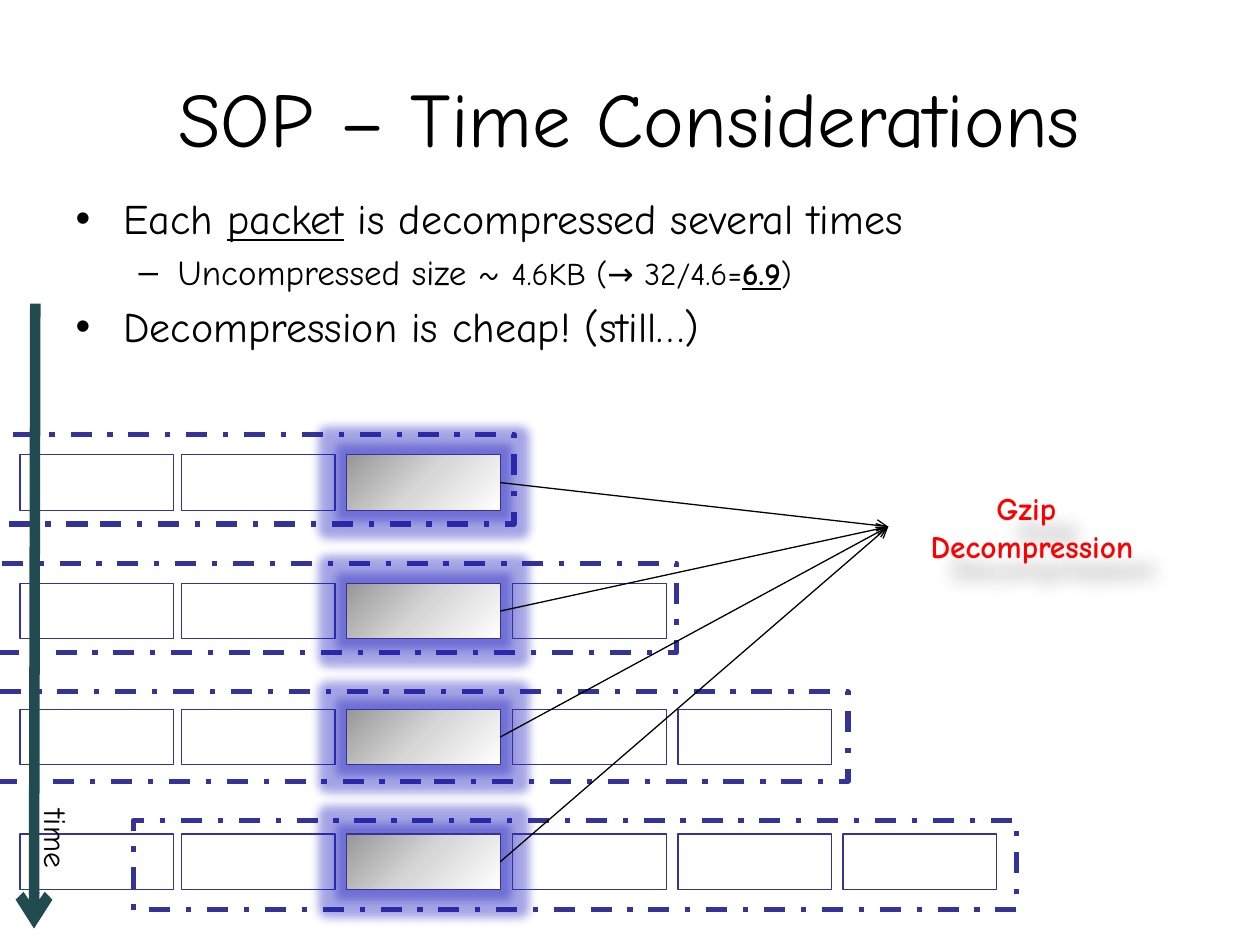
from pptx import Presentation
from pptx.dml.color import RGBColor
from pptx.enum.dml import MSO_LINE
from pptx.enum.shapes import MSO_CONNECTOR, MSO_SHAPE
from pptx.enum.text import MSO_ANCHOR, MSO_AUTO_SIZE, PP_ALIGN
from pptx.oxml import parse_xml
from pptx.oxml.ns import nsdecls
from pptx.util import Inches, Pt

STRAIGHT = MSO_CONNECTOR.STRAIGHT
RECTANGLE = MSO_SHAPE.RECTANGLE
DASH_DOT = MSO_LINE.DASH_DOT
CENTER, LEFT = PP_ALIGN.CENTER, PP_ALIGN.LEFT
MIDDLE, TOP = MSO_ANCHOR.MIDDLE, MSO_ANCHOR.TOP
NO_AUTOFIT = MSO_AUTO_SIZE.NONE

FONT = "Comic Neue"
COLORS = {"text": "000000", "outline": "333399", "glow": "1F1FBF",
          "time": "224B50", "label": "FF0000"}
PACKET_GRADIENT = [(0, "979797"), (50, "D7D7D7"), (100, "FFFFFF")]

BOX_WIDTH, BOX_HEIGHT = 1.22, 0.44
COLUMN_LEFTS = [0.16, 1.44, 2.75, 4.07, 5.38, 6.69]
ROW_TOPS = [3.61, 4.63, 5.63, 6.62]
PACKET_COLUMN = 2
FRAME_TOP, FRAME_STEP, FRAME_HEIGHT = 3.45, 1.02, 0.71
FRAME_SPANS = [(-2.69, 6.77), (-1.4, 6.77), (-0.04, 6.77), (1.06, 7.01)]
TARGET = (7.05, 4.18)

# Each paragraph: level, bullet, indent, hanging, runs of (text, format)
BULLETS = [
    (0, "•", 0.38, 0.38, [("Each ", {"size": Pt(24)}),
                          ("packet", {"size": Pt(24), "underline": True}),
                          (" is decompressed several times", {"size": Pt(24)})]),
    (1, "–", 0.81, 0.31, [("Uncompressed size ~ ", {"size": Pt(20)}),
                          ("4.6KB (→ 32/4.6=", {"size": Pt(18)}),
                          ("6.9", {"size": Pt(18), "bold": True, "underline": True}),
                          (")", {"size": Pt(18)})]),
    (0, "•", 0.38, 0.38, [("Decompression is cheap! (still…)", {"size": Pt(24)})]),
]


def drawing_xml(tag, attributes="", content=""):
    return parse_xml(f'<a:{tag} {nsdecls("a")} {attributes}>{content}</a:{tag}>')


def effect_color(color, opacity):
    return f'<a:srgbClr val="{color}"><a:alpha val="{opacity * 1000}"/></a:srgbClr>'


class SlideBuilder:
    def __init__(self, slide):
        self.slide = slide

    def place(self, shape, left, top, width, height):
        shape.left, shape.top = Inches(left), Inches(top)
        shape.width, shape.height = Inches(width), Inches(height)

    def add_run(self, paragraph, text, color="text", **formats):
        run = paragraph.add_run()
        run.text = text
        run.font.name = FONT
        run.font.color.rgb = RGBColor.from_string(COLORS[color])
        for name, value in formats.items():
            setattr(run.font, name, value)

    def set_frame(self, shape, **formats):
        settings = {"word_wrap": True, "auto_size": NO_AUTOFIT, **formats}
        for name, value in settings.items():
            setattr(shape.text_frame, name, value)

    def title(self, text, bounds):
        shape = self.slide.shapes.title
        self.place(shape, *bounds)
        self.set_frame(shape, vertical_anchor=MIDDLE)
        paragraph = shape.text_frame.paragraphs[0]
        paragraph.alignment = CENTER
        self.add_run(paragraph, text, size=Pt(44))

    def bullets(self, items, bounds):
        shape = self.slide.placeholders[1]
        self.place(shape, *bounds)
        self.set_frame(shape, vertical_anchor=TOP)
        for index, (level, bullet, indent, hanging, runs) in enumerate(items):
            frame = shape.text_frame
            paragraph = frame.add_paragraph() if index else frame.paragraphs[0]
            paragraph.level = level
            properties = paragraph._p.get_or_add_pPr()
            properties.set("marL", str(Inches(indent)))
            properties.set("indent", str(-Inches(hanging)))
            properties.append(drawing_xml("spcBef", content='<a:spcPct val="20000"/>'))
            properties.append(drawing_xml("buChar", f'char="{bullet}"'))
            for text, formats in runs:
                self.add_run(paragraph, text, **formats)

    def textbox(self, lines, bounds, alignment=LEFT, rotation=0, **formats):
        shape = self.slide.shapes.add_textbox(*map(Inches, bounds))
        shape.rotation = rotation
        self.set_frame(shape)
        paragraph = shape.text_frame.paragraphs[0]
        paragraph.alignment = alignment
        for index, line in enumerate(lines):
            if index:
                paragraph.add_line_break()
            self.add_run(paragraph, line, **formats)
        return shape

    def effect(self, shape, effect):
        shape.shadow.inherit = False
        shape._element.spPr.find(drawing_xml("effectLst").tag).append(effect)

    def rectangle(self, bounds, line_width=0.75, dash=None):
        shape = self.slide.shapes.add_shape(RECTANGLE, *map(Inches, bounds))
        shape.shadow.inherit = False
        shape.fill.background()
        shape.line.color.rgb = RGBColor.from_string(COLORS["outline"])
        shape.line.width = Pt(line_width)
        shape.line.dash_style = dash
        return shape

    def packet(self, bounds):
        """Draw the highlighted box with a gradient and a glow."""
        shape = self.rectangle(bounds)
        stops = "".join(f'<a:gs pos="{position * 1000}"><a:srgbClr val="{color}"/></a:gs>'
                        for position, color in PACKET_GRADIENT)
        gradient = drawing_xml("gradFill", content=f'<a:gsLst>{stops}</a:gsLst>'
                                                   '<a:lin ang="2700000" scaled="1"/>')
        properties = shape._element.spPr
        properties.replace(properties.find(drawing_xml("noFill").tag), gradient)
        self.effect(shape, drawing_xml("glow", f'rad="{Pt(11)}"',
                                       effect_color(COLORS["glow"], 40)))

    def arrow(self, start, end, color, width):
        connector = self.slide.shapes.add_connector(
            STRAIGHT, *map(Inches, (*start, *end)))
        connector.line.color.rgb = RGBColor.from_string(COLORS[color])
        connector.line.width = Pt(width)
        connector.line._get_or_add_ln().append(drawing_xml("tailEnd", 'type="arrow"'))
        connector._element.spPr.append(drawing_xml("effectLst"))


def main():
    presentation = Presentation()
    presentation.slide_width, presentation.slide_height = Inches(10), Inches(7.5)
    slide = presentation.slides.add_slide(presentation.slide_layouts[1])
    builder = SlideBuilder(slide)

    builder.title("SOP – Time Considerations", (0.35, 0.3, 9.29, 1.25))
    builder.bullets(BULLETS, (0.5, 1.48, 9, 4.95))

    for row, (top, (left, width)) in enumerate(zip(ROW_TOPS, FRAME_SPANS)):
        frame_top = FRAME_TOP + row * FRAME_STEP
        builder.rectangle((left, frame_top, width, FRAME_HEIGHT), 3, DASH_DOT)
        for column, box_left in enumerate(COLUMN_LEFTS[:PACKET_COLUMN + 1 + row]):
            draw = builder.packet if column == PACKET_COLUMN else builder.rectangle
            draw((box_left, top, BOX_WIDTH, BOX_HEIGHT))

    label = builder.textbox(["Gzip ", "Decompression"], (7.05, 3.83, 2.28, 0.71),
                            CENTER, color="label", size=Pt(18), bold=True)
    builder.effect(label, drawing_xml(
        "outerShdw", f'blurRad="{Inches(0.15)}" dist="{Inches(0.24)}" dir="2700000"',
        effect_color(COLORS["text"], 35)))

    packet_right = COLUMN_LEFTS[PACKET_COLUMN] + BOX_WIDTH
    for top in ROW_TOPS:
        builder.arrow((packet_right, top + BOX_HEIGHT / 2), TARGET, "text", 0.75)
    builder.arrow((0.28, 2.41), (0.27, 7.37), "time", 6)
    builder.textbox(["time"], (-0.12, 6.7, 1.14, 0.4), rotation=90, size=Pt(18))

    presentation.save("out.pptx")


if __name__ == "__main__":
    main()
